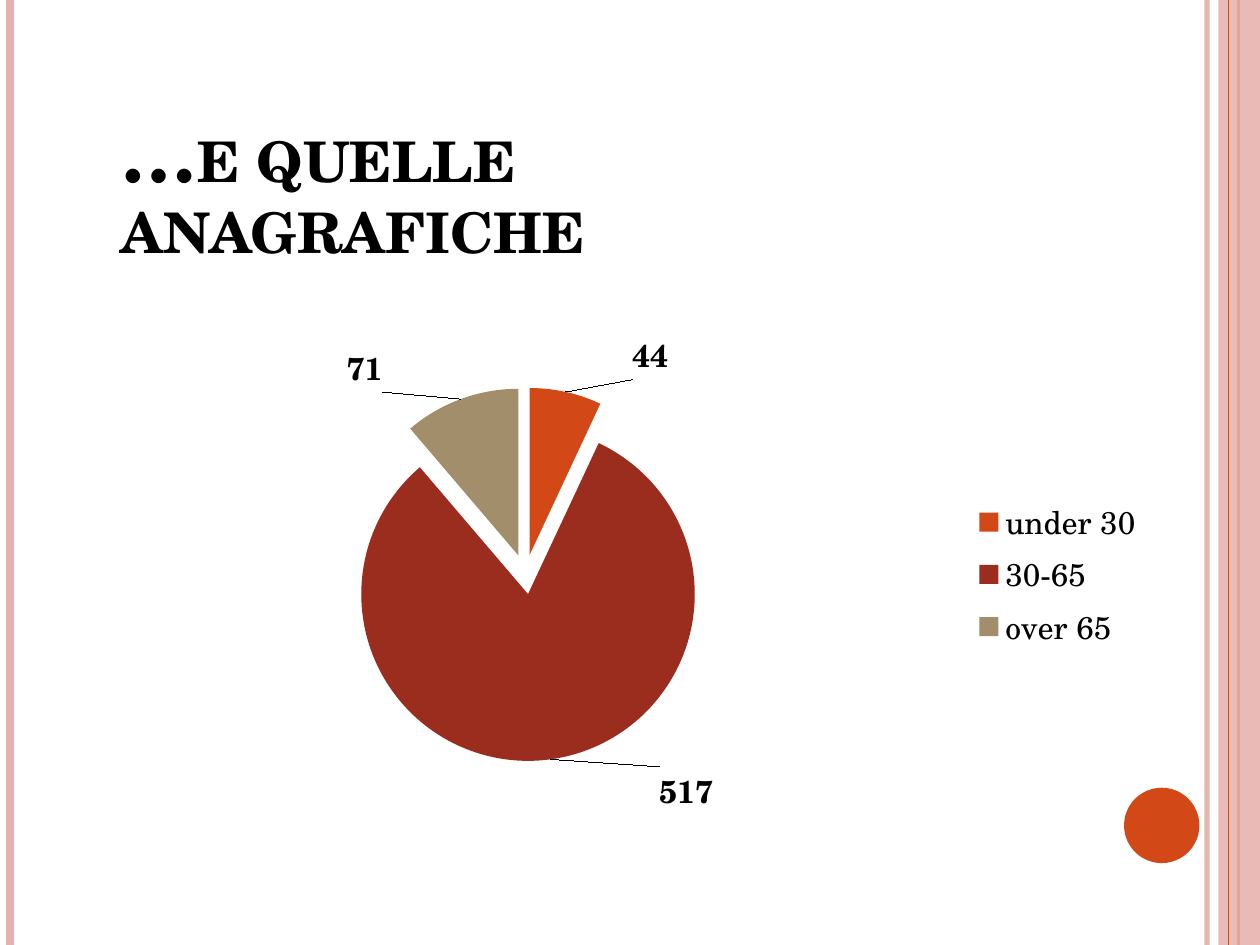
from lxml.etree import SubElement
from pptx import Presentation
from pptx.chart.data import CategoryChartData
from pptx.dml.color import RGBColor
from pptx.enum.chart import XL_CHART_TYPE as ChartType, XL_LABEL_POSITION as LabelPos, XL_LEGEND_POSITION as LegendPos
from pptx.enum.shapes import MSO_CONNECTOR as Connector, MSO_SHAPE as Preset
from pptx.enum.text import MSO_ANCHOR as Anchor, PP_ALIGN as Align
from pptx.oxml import parse_xml
from pptx.oxml.ns import nsdecls, qn
from pptx.util import Cm, Pt

FONT = "TeX Gyre Schola"
BLACK, PINK, ORANGE = "000000", "E6B1AC", "D34817"
WIDTH, HEIGHT = 25.4, 19.05

TITLE = [[("…", 44), ("E QUELLE", 32)], [("ANAGRAFICHE", 32)]]
TITLE_BOX = (2.18, 1.98, 20.65, 3.5)
CHART_BOX = (1.57, 6.35, 21.74, 10.46)
AGES = [
    ("under 30", 44, ORANGE, (0.06, -0.01)),
    ("30-65", 517, "9B2D1F", (0.1, 0)),
    ("over 65", 71, "A28E6A", (-0.07, 0)),
]
PIE_AREA = {"x": 0.24, "y": 0.14, "w": 0.35, "h": 0.72}
EXPLOSION = 12
BACK_RULES = [(24.33, PINK, 3, 93), (0.2, PINK, 4.5, 100), (24.97, ORANGE, 1.5, 100)]
FRONT_RULES = [(24.77, ORANGE, 0.75, 100)]
BAND = (Preset.RECTANGLE, (24.56, 0, 0.84, HEIGHT), PINK, 87)
DISC = (Preset.OVAL, (22.66, 15.88, 1.52, 1.52), ORANGE, 100)


def rgb(color):
    """Turn a hex string into a colour."""
    return RGBColor.from_string(color)


def set_opacity(shape, opacity):
    """Set the opacity, in percent, of the shape's only colour."""
    if opacity < 100:
        color = next(shape._element.spPr.iter(qn("a:srgbClr")))
        SubElement(color, qn("a:alpha"), val=str(opacity * 1000))


def style_font(font, **extra):
    """Give text the common font and any extra format values."""
    for key, value in {"name": FONT, **extra}.items():
        setattr(font, key, value)
    font.color.rgb = rgb(BLACK)


def add_rule(slide, x, color, width, opacity):
    """Draw a vertical line over the whole height of the slide."""
    rule = slide.shapes.add_connector(Connector.STRAIGHT, Cm(x), 0, Cm(x), Cm(HEIGHT))
    rule.line.color.rgb = rgb(color)
    rule.line.width = Pt(width)
    set_opacity(rule, opacity)
    SubElement(rule._element.spPr, qn("a:effectLst"))


def add_ornament(slide, preset, box, color, opacity):
    """Draw a plain filled shape."""
    ornament = slide.shapes.add_shape(preset, *map(Cm, box))
    ornament.shadow.inherit = False
    ornament.fill.solid()
    ornament.fill.fore_color.rgb = rgb(color)
    ornament.line.fill.background()
    set_opacity(ornament, opacity)


def manual_layout(values, target=""):
    """Build a chart layout element from fractions of the chart."""
    layout = parse_xml(f"<c:layout {nsdecls('c')}><c:manualLayout/></c:layout>")
    modes = {key + "Mode": "edge" for key in "xy"} if target else {}
    settings = {"layoutTarget": target, **modes, **values} if target else values
    for key, value in settings.items():
        SubElement(layout[0], qn("c:" + key), val=str(value))
    return layout


def add_age_chart(slide):
    """Add the exploded pie of age groups."""
    data = CategoryChartData()
    data.categories = [age for age, *_ in AGES]
    data.add_series("Series 1", [count for _, count, *_ in AGES])
    chart = slide.shapes.add_chart(ChartType.PIE, *map(Cm, CHART_BOX), data).chart
    chart.has_title = False
    style_font(chart.font, size=Pt(18))
    chart.has_legend = True
    chart.legend.position = LegendPos.RIGHT
    chart.legend.include_in_layout = False
    style_font(chart.legend.font, size=Pt(18))

    plot_area = chart._chartSpace.chart.plotArea
    for layout in plot_area.findall(qn("c:layout")):
        plot_area.remove(layout)
    plot_area.insert(0, manual_layout(PIE_AREA, "inner"))

    pie = chart.plots[0]
    pie.vary_by_categories = True
    ages = pie.series[0]
    ages._element.find(qn("c:tx")).addnext(
        parse_xml(f'<c:explosion {nsdecls("c")} val="{EXPLOSION}"/>'))
    ages.data_labels.show_value = True
    style_font(ages.data_labels.font, size=Pt(18), bold=True)
    for index, (_, _, color, _) in enumerate(AGES):
        point = ages.points[index]
        point.format.fill.solid()
        point.format.fill.fore_color.rgb = rgb(color)
        point.data_label.position = LabelPos.OUTSIDE_END
        style_font(point.data_label.font, size=Pt(18), bold=True)
    for label, (*_, shift) in zip(ages._element.iter(qn("c:dLbl")), AGES):
        label.find(qn("c:idx")).addnext(manual_layout(dict(zip("xy", shift))))


def fill_title(title):
    """Place and write the slide title."""
    for side, value in zip(("left", "top", "width", "height"), TITLE_BOX):
        setattr(title, side, Cm(value))
    frame = title.text_frame
    frame.word_wrap = True
    frame.vertical_anchor = Anchor.MIDDLE
    for index, line in enumerate(TITLE):
        paragraph = frame.add_paragraph() if index else frame.paragraphs[0]
        paragraph.alignment = Align.LEFT
        paragraph.space_before = Pt(0)
        for words, size in line:
            run = paragraph.add_run()
            run.text = words
            style_font(run.font, size=Pt(size), bold=True)


def main():
    """Build and save the slide."""
    deck = Presentation()
    deck.slide_width, deck.slide_height = Cm(WIDTH), Cm(HEIGHT)
    slide = deck.slides.add_slide(deck.slide_layouts[5])
    for rule in BACK_RULES:
        add_rule(slide, *rule)
    add_ornament(slide, *BAND)
    for rule in FRONT_RULES:
        add_rule(slide, *rule)
    add_ornament(slide, *DISC)
    add_age_chart(slide)
    fill_title(slide.shapes.title)
    deck.save("out.pptx")


if __name__ == "__main__":
    main()
